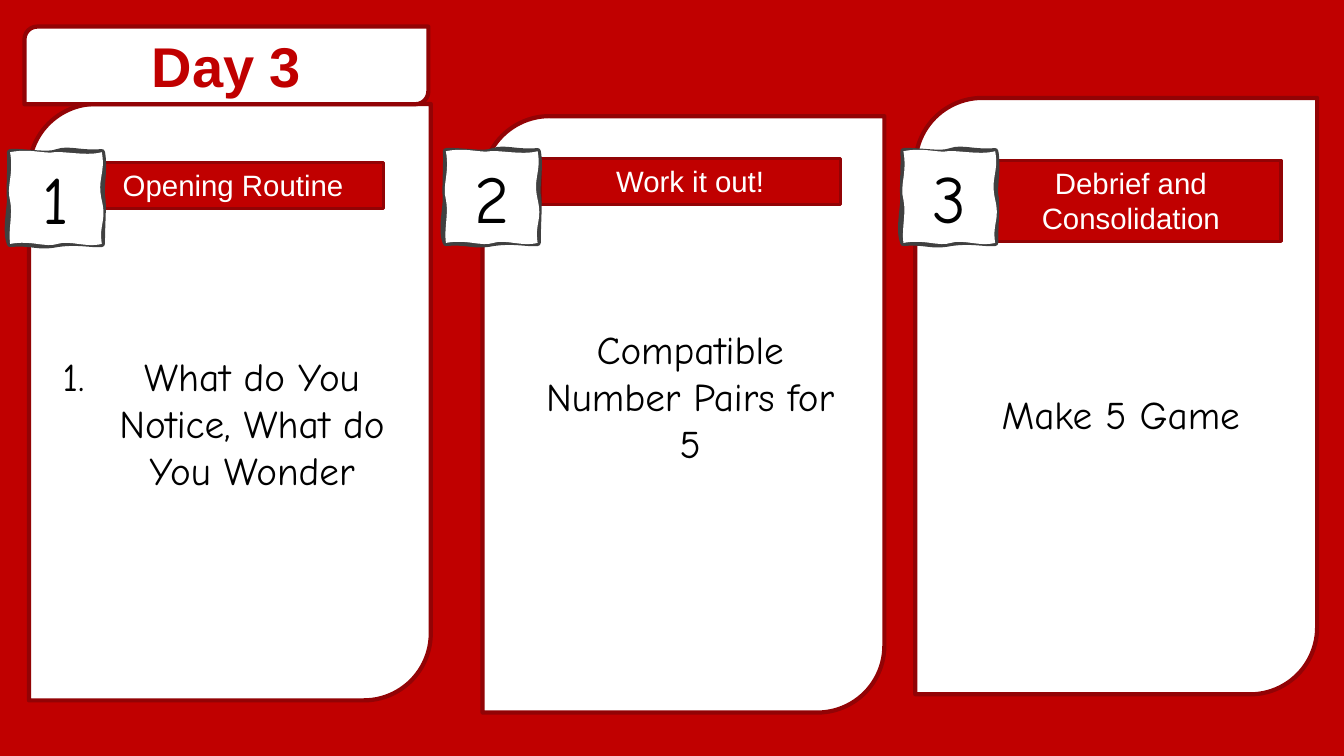
import pptx
import pptx.util
import pptx.dml.color
import pptx.enum.shapes
import pptx.enum.text
import pptx.oxml.ns
from lxml import etree

Pt = pptx.util.Pt
Kind = pptx.enum.shapes.MSO_SHAPE
Anchor = pptx.enum.text.MSO_ANCHOR
Fit = pptx.enum.text.MSO_AUTO_SIZE
qn = pptx.oxml.ns.qn

RED, DARK, WHITE, BLACK, GREY = "C00000", "920305", "FFFFFF", "000000", "404040"
SANS, HAND = "Arial", "Comic Neue"

CARDS = [(20.7, 74.3), (344.7, 83), (653.8, 70)]
LABELS = [
    ("Opening Routine", 59.2, 116, 33),
    ("Work it out!", 385.7, 113, 33),
    ("Debrief and Consolidation", 700.5, 114.5, 58),
]
BADGES = [(7.2, 108.7), (318.5, 108), (645.3, 108)]
NOTES = [
    ("Compatible Number Pairs for 5", 378, 228, 109),
    ("Make 5 Game", 685.5, 275, 41),
]
SIDE = 91
EDGE = [
    ((14, -1), (37, 4), (47, 0)),
    ((58, -4), (71, 2), (91, 0)),
    ((94, 15), (90, 34), (91, 43)),
    ((93, 52), (91, 70), (91, 91)),
    ((80, 92), (68, 88), (47, 91)),
    ((27, 95), (23, 89), (0, 91)),
    ((-5, 79), (0, 57), (0, 47)),
    ((-1, 37), (1, 10), (0, 0)),
]
FACE = [
    ((20, -4), (35, 2), (44, 0)),
    ((54, -1), (77, 4), (91, 0)),
    ((95, 21), (86, 26), (91, 48)),
    ((96, 69), (88, 71), (91, 91)),
    ((75, 95), (59, 87), (47, 91)),
    ((35, 95), (21, 87), (0, 91)),
    ((-2, 76), (3, 62), (0, 48)),
    ((-4, 34), (4, 22), (0, 0)),
]


def tint(fill, color):
    fill.solid()
    fill.fore_color.rgb = pptx.dml.color.RGBColor.from_string(color)


def paint(shape, fill, line, width):
    shape.shadow.inherit = False
    tint(shape.fill, fill)
    tint(shape.line.fill, line)
    shape.line.width = Pt(width)


def place(shape, x, y, w, h):
    shape.left, shape.top, shape.width, shape.height = Pt(x), Pt(y), Pt(w), Pt(h)
    shape._element.getparent().append(shape._element)


def write(shape, text, size, face, color, anchor, bold=False):
    frame = shape.text_frame
    frame.text = text
    frame.word_wrap = True
    frame.auto_size = Fit.NONE
    frame.vertical_anchor = anchor
    par = frame.paragraphs[0]
    par.alignment = pptx.enum.text.PP_ALIGN.CENTER
    par.space_before = Pt(0)
    par.font.size = Pt(size)
    par.font.name = face
    par.font.bold = bold
    tint(par.font.fill, color)
    return par


def block(slide, kind, x, y, w, h, fill, width):
    shape = slide.shapes.add_shape(kind, Pt(x), Pt(y), Pt(w), Pt(h))
    paint(shape, fill, DARK, width)
    return shape


def label(slide, text, x, y, h):
    shape = block(slide, Kind.RECTANGLE, x, y, 214.5, h, RED, 2.25)
    write(shape, text, 21, SANS, WHITE, Anchor.TOP)


def trace(group, curves, **flags):
    route = etree.SubElement(group, qn("a:path"), w=str(SIDE), h=str(SIDE), **flags)
    steps = [("a:moveTo", curves[-1][-1:])] + [("a:cubicBezTo", curve) for curve in curves]
    for name, spots in steps:
        step = etree.SubElement(route, qn(name))
        for x, y in spots:
            etree.SubElement(step, qn("a:pt"), x=str(x), y=str(y))
    etree.SubElement(route, qn("a:close"))


def badge(slide, text, x, y):
    draft = slide.shapes.build_freeform(0, 0, scale=Pt(0.72))
    draft.add_line_segments([(SIDE, 0), (SIDE, SIDE), (0, SIDE)], close=True)
    shape = draft.convert_to_shape(Pt(x), Pt(y))
    group = next(shape._element.iter(qn("a:pathLst")))
    group.remove(group[0])
    trace(group, EDGE, fill="none")
    trace(group, FACE, stroke="0")
    paint(shape, WHITE, GREY, 4.5)
    write(shape, text, 48, HAND, BLACK, Anchor.TOP)


def note(slide, text, x, y, h):
    box = slide.shapes.add_textbox(Pt(x), Pt(y), Pt(230), Pt(h))
    write(box, text, 28, HAND, BLACK, Anchor.MIDDLE)


def head(slide):
    spot = (17.5, 19, 288.5, 55.5)
    block(slide, Kind.ROUND_2_DIAG_RECTANGLE, *spot, WHITE, 3)
    title = slide.shapes.title
    place(title, *spot)
    write(title, "Day 3", 40, SANS, RED, Anchor.MIDDLE, bold=True)


def task(body):
    place(body, 19.4, 230.7, 263, 143)
    par = write(body, "What do You Notice, What do You Wonder", 28, HAND, BLACK, Anchor.MIDDLE)
    props = par._p.get_or_add_pPr()
    props.set("marL", str(Pt(58.2)))
    props.set("indent", str(-Pt(58.2)))
    mark = etree.Element(qn("a:buFont"), typeface="+mj-lt")
    number = etree.Element(qn("a:buAutoNum"), type="arabicPeriod")
    props.find(qn("a:spcBef")).addnext(mark)
    mark.addnext(number)


def main():
    deck = pptx.Presentation()
    deck.slide_width, deck.slide_height = Pt(960), Pt(540)
    slide = deck.slides.add_slide(deck.slide_layouts[1])
    tint(slide.background.fill, RED)
    for x, y in CARDS:
        block(slide, Kind.ROUND_2_DIAG_RECTANGLE, x, y, 287, 426, WHITE, 3)
    for item in LABELS:
        label(slide, *item)
    task(slide.placeholders[1])
    head(slide)
    for count, spot in enumerate(BADGES, 1):
        badge(slide, str(count), *spot)
    for item in NOTES:
        note(slide, *item)
    deck.save("out.pptx")


if __name__ == "__main__":
    main()
